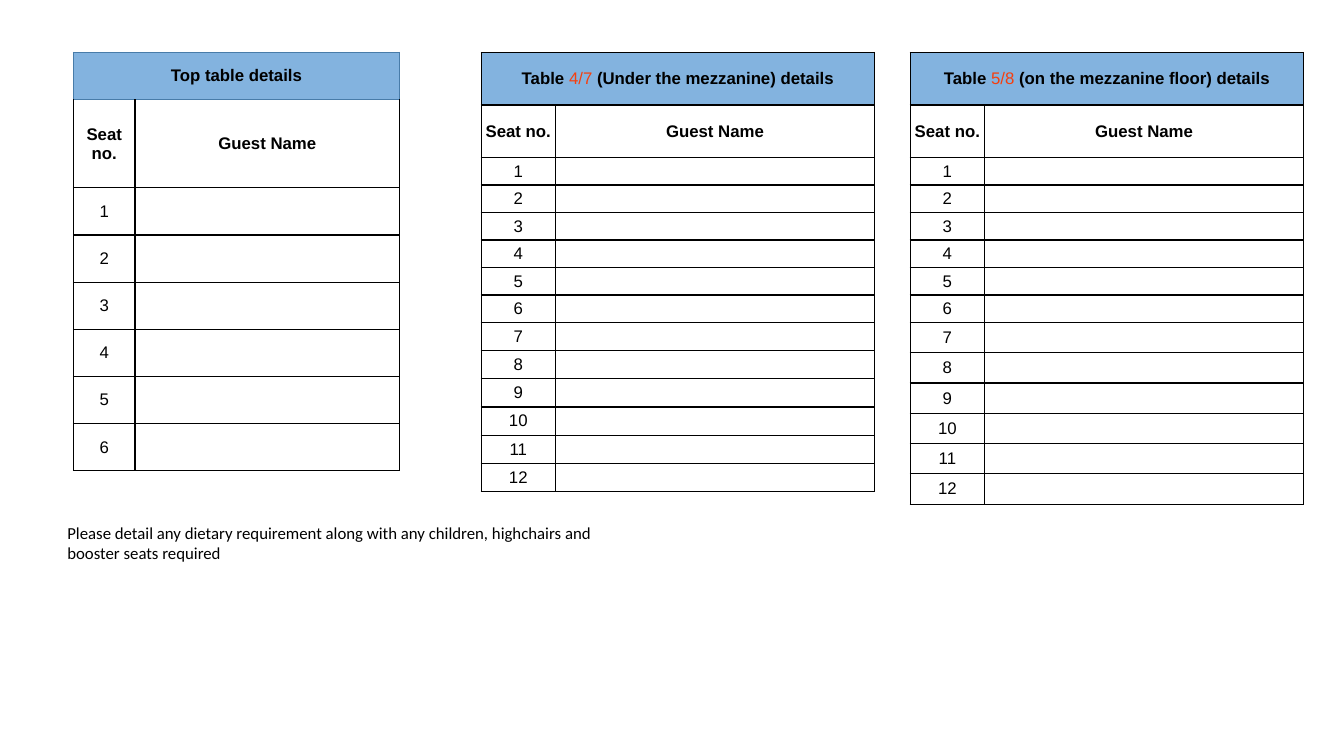
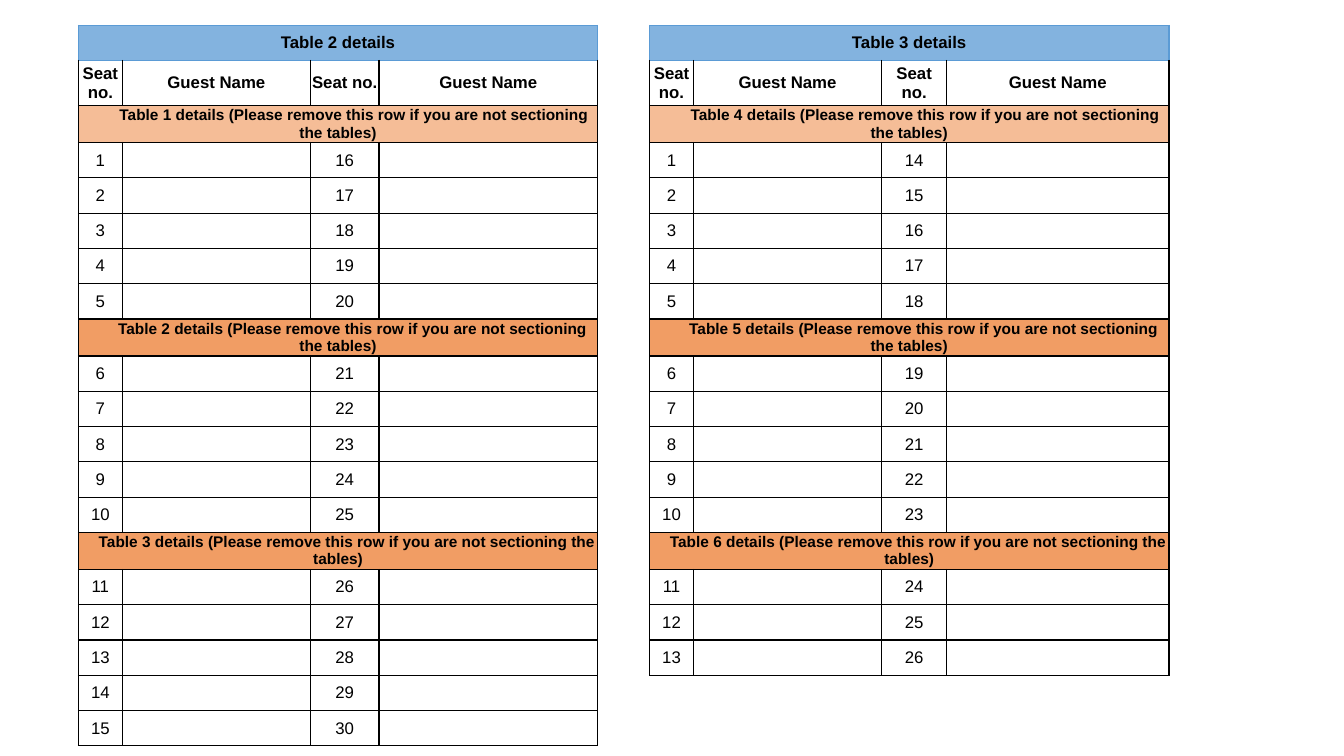
import lxml.etree
import pptx
import pptx.dml.color
import pptx.enum.text
import pptx.oxml.ns
import pptx.util

Pt = pptx.util.Pt
qn = pptx.oxml.ns.qn

# Shared look
TEXT = "000000"
HIGHLIGHT = "F53F0E"
TITLE_FILL = "83B3DF"
SECTION_FILLS = ["F5BD97", "F19D64", "F19D64"]
SECTION_INDENTS = [23, 21, 13]
SEAT, GUEST = "Seat no.", "Guest Name"


def color(hex_string):
    return pptx.dml.color.RGBColor.from_string(hex_string)


def add_seating_table(slide, left, top, widths, rows, title_border=TEXT):
    """Each row is (height, cell texts, bold, fill, size, indent); one text spans the row.

    A text given as a list is split into parts, with every second part highlighted.
    """
    height = sum(row[0] for row in rows)
    table = slide.shapes.add_table(len(rows), len(widths), Pt(left), Pt(top),
                                   Pt(sum(widths)), Pt(height)).table
    table.first_row = table.horz_banding = False
    for column, width in zip(table.columns, widths):
        column.width = Pt(width)

    for r, (row_height, texts, bold, fill, size, indent) in enumerate(rows):
        table.rows[r].height = Pt(row_height)
        if len(texts) == 1:
            table.cell(r, 0).merge(table.cell(r, len(widths) - 1))
        for c in range(len(widths)):
            cell = table.cell(r, c)
            cell.margin_left = cell.margin_right = cell.margin_top = cell.margin_bottom = 0
            cell.vertical_anchor = pptx.enum.text.MSO_ANCHOR.MIDDLE

            # Borders, then fill
            properties = cell._tc.get_or_add_tcPr()
            for side in ("lnL", "lnR", "lnT", "lnB"):
                on_title = r == 0 or (r == 1 and side == "lnT")
                line = lxml.etree.SubElement(properties, qn(f"a:{side}"), w=str(Pt(1)))
                solid = lxml.etree.SubElement(line, qn("a:solidFill"))
                lxml.etree.SubElement(solid, qn("a:srgbClr"),
                                      val=title_border if on_title else TEXT)
            if fill:
                cell.fill.solid()
                cell.fill.fore_color.rgb = color(fill)
            else:
                cell.fill.background()

            # Text
            paragraph = cell.text_frame.paragraphs[0]
            paragraph.alignment = pptx.enum.text.PP_ALIGN.CENTER
            paragraph.font.name = "Arial"
            paragraph.font.size = Pt(size)
            paragraph.font.bold = bold
            paragraph.font.color.rgb = color(TEXT)
            if indent:
                paragraph._p.get_or_add_pPr().set("indent", str(Pt(indent)))
            text = texts[c] if c < len(texts) else ""
            for part, words in enumerate(text if isinstance(text, list) else [text]):
                if words:
                    run = paragraph.add_run()
                    run.text = words
                    if part % 2:
                        run.font.bold = False
                        run.font.color.rgb = color(HIGHLIGHT)
            if not text:
                lxml.etree.SubElement(paragraph._p, qn("a:endParaRPr"), sz=str(size * 100))


presentation = pptx.Presentation()
presentation.slide_width, presentation.slide_height = Pt(960), Pt(540)
blank = presentation.slide_layouts[6]

# Slide 1: top table and the mezzanine tables
top_slide = presentation.slides.add_slide(blank)
single_tables = [
    (52.5, [44, 189], "Top table details", 33.7, 63, [33.7] * 6, "487CA9"),
    (343.75, [53, 228], ["Table ", "4/7 ", "(Under the mezzanine) details"],
     37.5, 37.5, [19.65] * 6 + [20.15] * 6, TEXT),
    (650.25, [53, 228], ["Table ", "5/8 ", "(on the mezzanine floor) details"],
     37.5, 37.5, [19.65] * 6 + [21.65] * 6, TEXT),
]
for left, widths, title, title_height, header_height, seat_heights, border in single_tables:
    rows = [(title_height, [title], True, TITLE_FILL, 12, 0),
            (header_height, [SEAT, GUEST], True, None, 12, 0)]
    rows += [(seat_height, [str(seat), ""], False, None, 12, 0)
             for seat, seat_height in enumerate(seat_heights, 1)]
    add_seating_table(top_slide, left, 37.5, widths, rows, border)

# Slide 1: note on requirements
note = top_slide.shapes.add_textbox(Pt(44.5), Pt(369.5), Pt(392.5), Pt(36))
note.fill.solid()
note.fill.fore_color.rgb = color("FFFFFF")
frame = note.text_frame
frame.word_wrap = True
frame.margin_left = frame.margin_right = frame.margin_top = frame.margin_bottom = Pt(3.6)
request = frame.paragraphs[0]
request.text = ("Please detail any dietary requirement along with any children, "
                "highchairs and booster seats required")
request.font.name = "Calibri"
request.font.size = Pt(12)
request.font.color.rgb = color(TEXT)

# Slide 2: sectioned tables, seats numbered down two columns, five rows a section
sectioned_slide = presentation.slides.add_slide(blank)
sectioned_tables = [
    (56, [31.4, 134.4, 48.9, 156.3], "Table 2 details", 1, 15),
    (464, [31.4, 134.4, 46.5, 158.7], "Table 3 details", 4, 13),
]
for left, widths, title, first_section, seats_per_column in sectioned_tables:
    rows = [(25, [title], True, TITLE_FILL, 12, 0),
            (32.2, [SEAT, GUEST, SEAT, GUEST], True, None, 12, 0)]
    for seat in range(1, seats_per_column + 1):
        section, position = divmod(seat - 1, 5)
        if position == 0:
            label = (f"Table {first_section + section} details "
                     "(Please remove this row if you are not sectioning the tables)")
            rows.append((25.3, [label], True, SECTION_FILLS[section], 11,
                         SECTION_INDENTS[section]))
        rows.append((25.2, [str(seat), "", str(seat + seats_per_column), ""],
                     False, None, 12, 0))
    add_seating_table(sectioned_slide, left, 18.25, widths, rows, "5B9BD5")

presentation.save("out.pptx")
